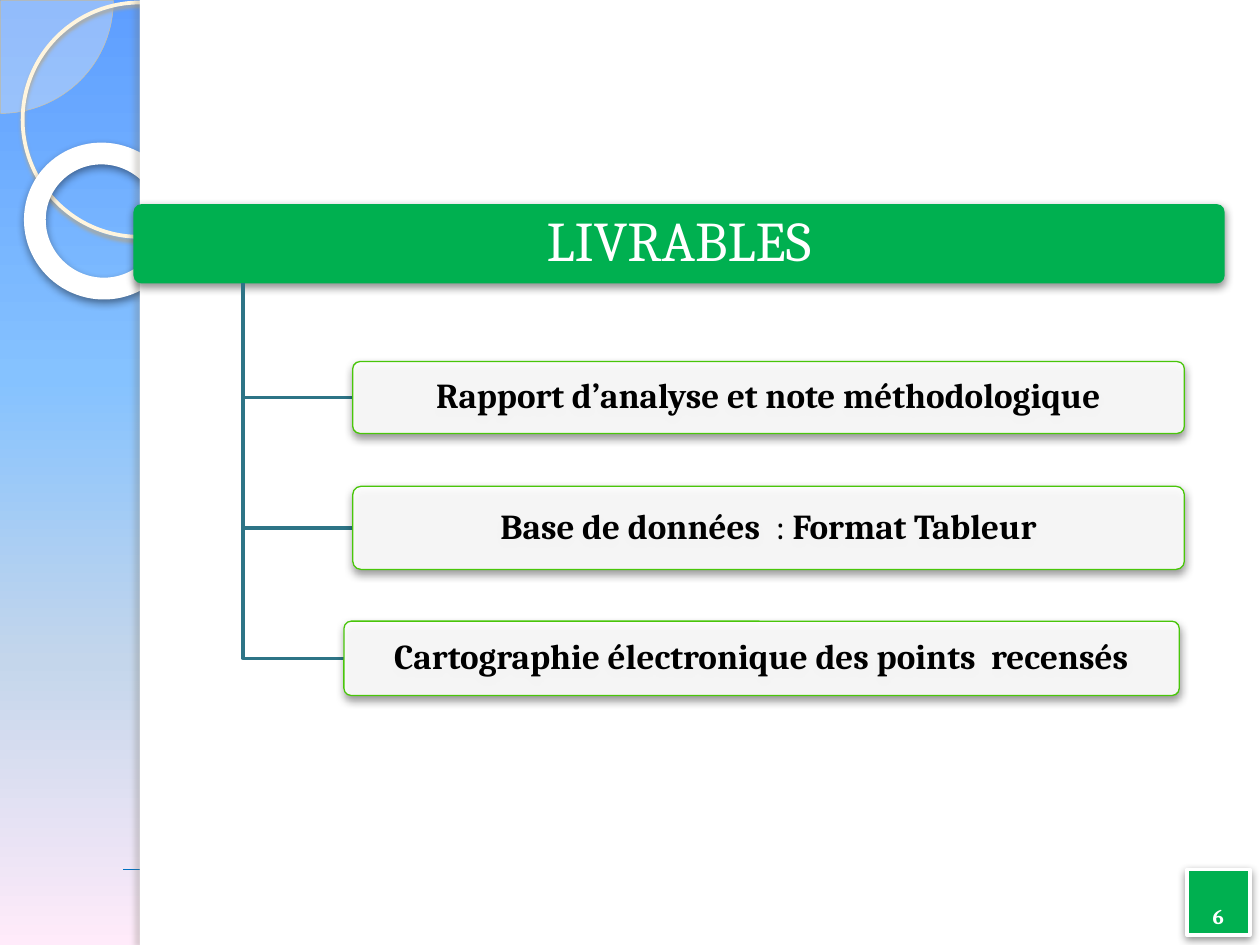
"""Build the slide that lists the project deliverables."""
from lxml import etree
from pptx import Presentation
from pptx.dml.color import RGBColor
from pptx.enum.shapes import MSO_CONNECTOR, MSO_SHAPE
from pptx.enum.text import MSO_ANCHOR, PP_ALIGN
from pptx.oxml.ns import qn
from pptx.util import Inches, Pt

PIE, OVAL, DONUT = MSO_SHAPE.PIE, MSO_SHAPE.OVAL, MSO_SHAPE.DONUT
RECT, ROUND = MSO_SHAPE.RECTANGLE, MSO_SHAPE.ROUNDED_RECTANGLE
STRAIGHT = MSO_CONNECTOR.STRAIGHT
MIDDLE, BOTTOM = MSO_ANCHOR.MIDDLE, MSO_ANCHOR.BOTTOM
CENTER = PP_ALIGN.CENTER

WHITE = RGBColor(255, 255, 255)
BLACK = RGBColor(0, 0, 0)
GREEN = RGBColor(0x00, 0xB0, 0x50)
LIME = RGBColor(0x49, 0xC6, 0x0A)
TEAL = RGBColor(0x2D, 0x74, 0x86)
BLUE = RGBColor(0x00, 0x70, 0xC0)
CREAM = RGBColor(0xFE, 0xFA, 0xF4)
SAND = RGBColor(0xD3, 0xC3, 0x9F)
IVORY = RGBColor(0xFF, 0xF5, 0xDE)
TAN = RGBColor(0xB0, 0xA6, 0x8F)
GRAY = RGBColor(0x73, 0x6F, 0x63)

SKY = [(0, "5E9EFF"), (40, "85C2FF"), (70, "C4D6EB"), (100, "FFEBFA")]
SOFT = (BLACK, 43, 5, 2, 90)
TITLE = "LIVRABLES"
HEAD = (1.06, 1.62, 8.66, 0.63)
TRUNK = 1.93
ITEMS = [
    ((2.8, 2.87, 6.6, 0.57),
     [("Rapport d’analyse et note méthodologique", True)]),
    ((2.8, 3.86, 6.6, 0.66),
     [("Base de données", True), ("  : ", False), ("Format Tableur", True)]),
    ((2.73, 4.93, 6.63, 0.59),
     [("Cartographie électronique des points  recensés", True)]),
]


def add(parent, tag, **attrs):
    node = etree.SubElement(parent, qn(tag))
    for key, value in attrs.items():
        node.set(key, str(value))
    return node


def style(shape, fill=None, alpha=None, line=None, shadow=None):
    if fill is None:
        shape.fill.background()
    else:
        shape.fill.solid()
        shape.fill.fore_color.rgb = fill
    if alpha:
        color = shape.element.spPr.find(qn("a:solidFill"))[0]
        add(color, "a:alpha", val=alpha * 1000)
    if line:
        shape.line.color.rgb = line[0]
        shape.line.width = Pt(line[1])
    else:
        shape.line.fill.background()
    shape.shadow.inherit = False
    if shadow:
        tint, depth, blur, dist, angle = shadow
        effects = shape.element.spPr.find(qn("a:effectLst"))
        outer = add(effects, "a:outerShdw", blurRad=Pt(blur), dist=Pt(dist),
                    dir=angle * 60000, algn="ctr", rotWithShape=0)
        color = add(outer, "a:srgbClr", val=tint)
        add(color, "a:alpha", val=depth * 1000)


def draw(slide, kind, box, adjust=(), turn=0, **look):
    shape = slide.shapes.add_shape(kind, *map(Inches, box))
    for i, value in enumerate(adjust):
        shape.adjustments[i] = value
    shape.rotation = turn
    style(shape, **look)
    return shape


def write(shape, runs, size=20, color=BLACK, anchor=MIDDLE,
          inset=(0.04, 0.03), spacing=0.9):
    frame = shape.text_frame
    frame.word_wrap = True
    frame.vertical_anchor = anchor
    frame.margin_left = frame.margin_right = Inches(inset[0])
    frame.margin_top = frame.margin_bottom = Inches(inset[1])
    para = frame.paragraphs[0]
    para.alignment = CENTER
    para.line_spacing = spacing
    for text, bold in runs:
        run = para.add_run()
        run.text = text
        run.font.name = "Cambria"
        run.font.size = Pt(size)
        run.font.bold = bold
        run.font.color.rgb = color


def paint(slide):
    fill = slide.background.fill
    fill.gradient()
    fill.gradient_angle = 270
    stops = slide.element.find(".//" + qn("a:gsLst"))
    for stop in list(stops):
        stops.remove(stop)
    for place, tint in SKY:
        add(add(stops, "a:gs", pos=place * 1000), "a:srgbClr", val=tint)


def decorate(slide):
    draw(slide, PIE, (-0.89, -0.89, 1.79, 1.79), adjust=(0, 54.02),
         fill=CREAM, alpha=33, line=(SAND, 0.25))
    draw(slide, OVAL, (0.18, 0.02, 1.86, 1.86), line=(IVORY, 2.15),
         shadow=(TAN, 85, 2, 2, 90))
    draw(slide, DONUT, (0.2, 1.15, 1.23, 1.21), adjust=(0.12,), turn=38.6,
         fill=WHITE, line=(WHITE, 2), shadow=SOFT)
    rule = slide.shapes.add_connector(
        STRAIGHT, *map(Inches, (0.98, 6.9, 10, 6.9)))
    rule.line.color.rgb = BLUE
    rule.line.width = Pt(0.75)
    add(rule.element.spPr, "a:effectLst")
    draw(slide, RECT, (1.11, 0, 8.89, 7.5), fill=WHITE)
    draw(slide, RECT, (1.11, 0, 0.08, 7.5), fill=WHITE,
         shadow=(GRAY, 25, 3, 3, 180))


def branch(slide, box):
    left, top, _, height = box
    start = HEAD[1] + HEAD[3]
    mid = top + height / 2
    pen = slide.shapes.build_freeform(Inches(TRUNK), Inches(start))
    pen.add_line_segments([(Inches(TRUNK), Inches(mid)),
                           (Inches(left), Inches(mid))], close=False)
    style(pen.convert_to_shape(), line=(TEAL, 2))


def main():
    deck = Presentation()
    deck.slide_width, deck.slide_height = Inches(10), Inches(7.5)
    slide = deck.slides.add_slide(deck.slide_layouts[6])
    paint(slide)
    decorate(slide)
    page = draw(slide, RECT, (9.42, 6.9, 0.5, 0.52), fill=GREEN,
                line=(WHITE, 2), shadow=SOFT)
    write(page, [("6", True)], size=12, color=WHITE, anchor=BOTTOM,
          inset=(0.1, 0.05), spacing=1.0)
    head = draw(slide, ROUND, HEAD, adjust=(0.1,), fill=GREEN, shadow=SOFT)
    write(head, [(TITLE, False)], size=32, color=WHITE, inset=(0.07, 0.04))
    for box, runs in ITEMS:
        branch(slide, box)
        card = draw(slide, ROUND, box, adjust=(0.1,), fill=WHITE, alpha=90,
                    line=(LIME, 0.75), shadow=SOFT)
        write(card, runs)
    deck.save("out.pptx")


if __name__ == "__main__":
    main()
